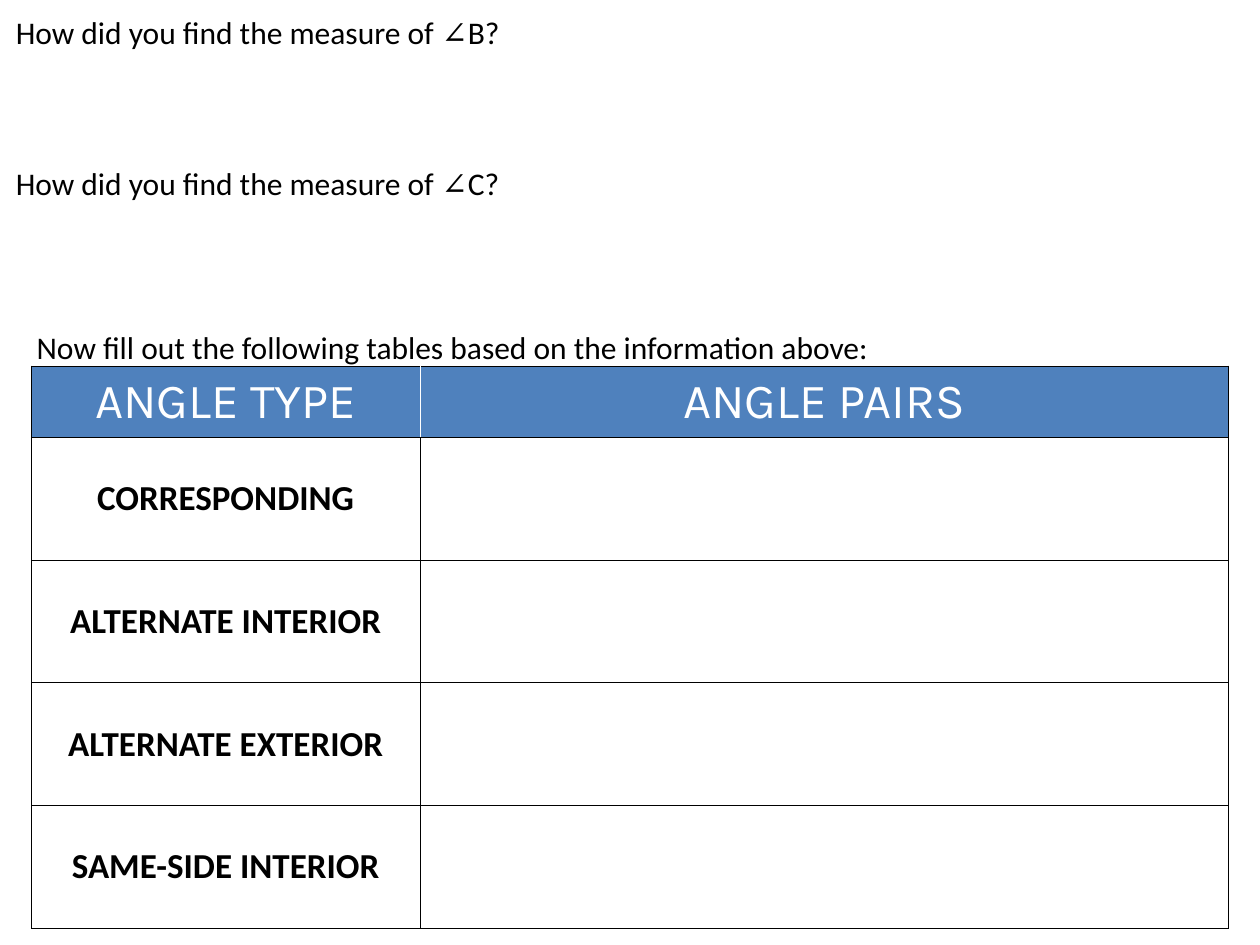
"""Build a worksheet slide with two angle questions and a table of angle pairs."""
from lxml import etree
from pptx import Presentation
from pptx.dml.color import RGBColor
from pptx.enum import text as t
from pptx.oxml import ns
from pptx.util import Pt

ASK = "How did you find the measure of "
ASKED = [[(ASK, "Calibri"), ("∠", "Cambria"), (name + "?", "Calibri")] for name in "BC"]
TASK = [[("Now fill out the following tables based on the information above:", "Calibri")]]
HEAD = ["ANGLE TYPE", "ANGLE PAIRS"]
KINDS = ["CORRESPONDING", "ALTERNATE INTERIOR", "ALTERNATE EXTERIOR", "SAME-SIDE INTERIOR"]
COLS = [222, 462]
HEAD_H, ROW_H = 40, 70.1
BLACK, WHITE, BLUE = "000000", "FFFFFF", "4F81BD"


def paint(fill, hue):
    fill.solid()
    fill.fore_color.rgb = RGBColor.from_string(hue)


def style(run, font, size, hue=BLACK, bold=False):
    run.font.name, run.font.size, run.font.bold = font, Pt(size), bold
    paint(run.font.fill, hue)


def add_text(slide, box, paras, gap=0):
    frame = slide.shapes.add_textbox(*map(Pt, box)).text_frame
    frame.word_wrap = True
    frame.margin_left = frame.margin_right = frame.margin_top = frame.margin_bottom = Pt(3)
    for i, parts in enumerate(paras):
        para = frame.add_paragraph() if i else frame.paragraphs[0]
        para.space_before = Pt(gap if i else 0)
        for words, font in parts:
            run = para.add_run()
            run.text = words
            style(run, font, 18)


def add_edges(cell, hues):
    props = cell._tc.get_or_add_tcPr()
    for side, hue in zip("LRTB", hues):
        line = etree.SubElement(props, ns.qn("a:ln" + side), w=str(Pt(0.5)))
        fill = etree.SubElement(line, ns.qn("a:solidFill"))
        etree.SubElement(fill, ns.qn("a:srgbClr"), val=hue)


def add_grid(slide):
    rows = [HEAD] + [[kind, ""] for kind in KINDS]
    high = HEAD_H + ROW_H * len(KINDS)
    grid = slide.shapes.add_table(len(rows), 2, Pt(18), Pt(209.2), Pt(sum(COLS)), Pt(high)).table
    for col, wide in zip(grid.columns, COLS):
        col.width = Pt(wide)
    for r, words in enumerate(rows):
        grid.rows[r].height = Pt(ROW_H if r else HEAD_H)
        for c, word in enumerate(words):
            cell = grid.cell(r, c)
            inner = BLACK if r else WHITE
            add_edges(cell, [inner if c else BLACK, BLACK if c else inner, BLACK, BLACK])
            cell.vertical_anchor = t.MSO_ANCHOR.MIDDLE
            if r:
                cell.fill.background()
            else:
                paint(cell.fill, BLUE)
            if word:
                cell.text_frame.text = word
                para = cell.text_frame.paragraphs[0]
                para.alignment = t.PP_ALIGN.CENTER
                look = ("Calibri", 20, BLACK, True) if r else ("Karla", 28, WHITE)
                style(para.runs[0], *look)


def main():
    deck = Presentation()
    deck.slide_width, deck.slide_height = Pt(720), Pt(540)
    slide = deck.slides.add_slide(deck.slide_layouts[6])
    add_text(slide, (6, 4.5, 708, 116), ASKED, gap=64.5)
    add_text(slide, (18, 184.5, 684, 23), TASK)
    add_grid(slide)
    deck.save("out.pptx")


if __name__ == "__main__":
    main()
